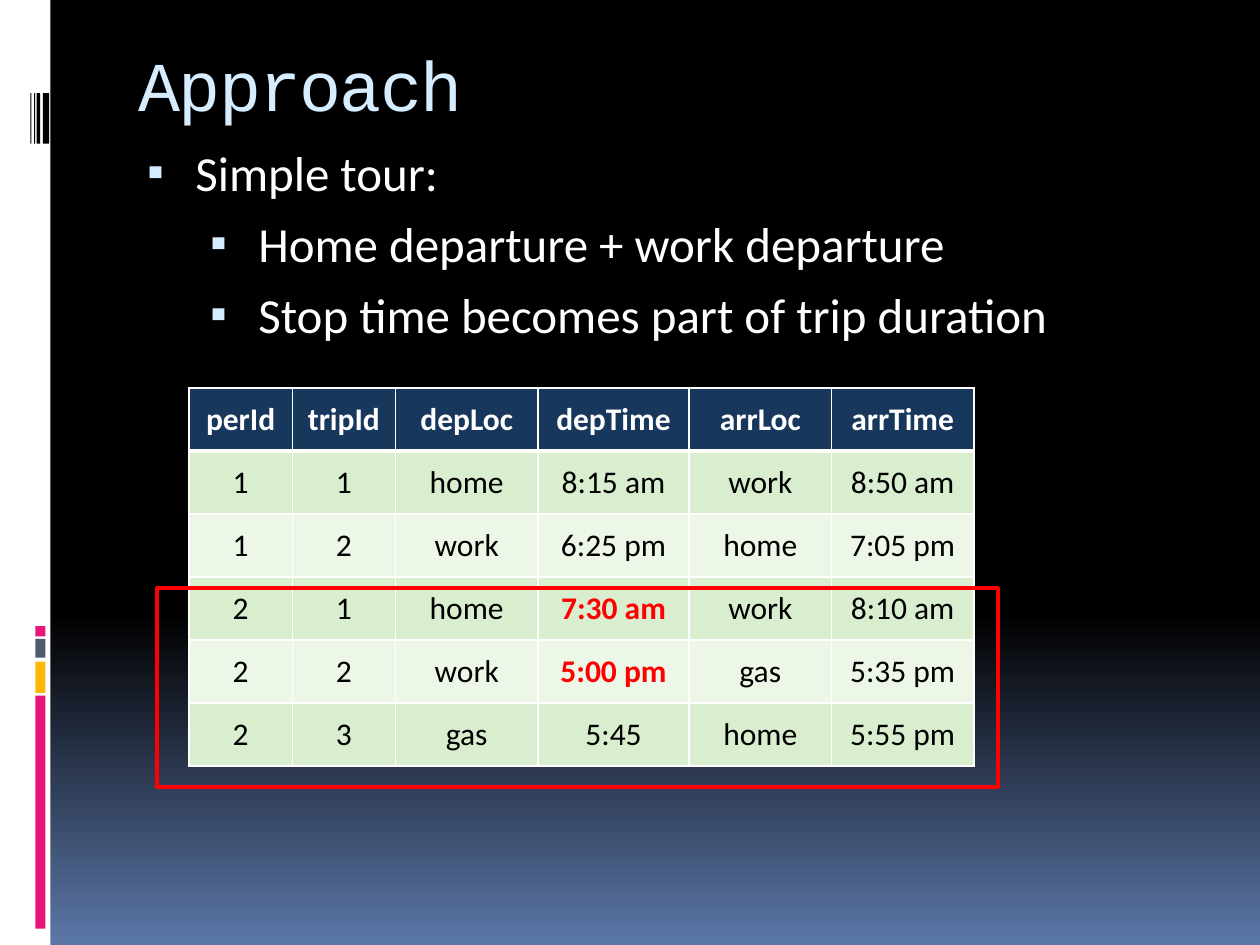
from lxml.etree import SubElement
from pptx import Presentation
from pptx.dml.color import RGBColor
from pptx.enum.shapes import MSO_SHAPE as Shape
from pptx.enum.text import MSO_ANCHOR as Anchor, MSO_AUTO_SIZE as AutoSize, PP_ALIGN as Align
from pptx.oxml import parse_xml
from pptx.oxml.ns import nsdecls, qn
from pptx.util import Inches, Pt

BLACK = RGBColor(0x00, 0x00, 0x00)
WHITE = RGBColor(0xFF, 0xFF, 0xFF)
DUSK = RGBColor(0x5B, 0x77, 0xA8)
PINK = RGBColor(0xEA, 0x15, 0x7A)
AMBER = RGBColor(0xFE, 0xB8, 0x0A)
SLATE = RGBColor(0x4E, 0x5B, 0x6F)
ICE = RGBColor(0xD6, 0xEC, 0xFF)
NAVY = RGBColor(0x17, 0x37, 0x5D)
GREEN = RGBColor(0xD8, 0xEE, 0xCE)
PALE_GREEN = RGBColor(0xEC, 0xF7, 0xE8)
RED = RGBColor(0xFF, 0x00, 0x00)

SIDEBAR = [
    (0, 0, 0.4, 7.5, WHITE),
    (0.28, 5.52, 0.08, 1.85, PINK),
    (0.28, 5.25, 0.08, 0.25, AMBER),
    (0.28, 5.07, 0.08, 0.15, SLATE),
    (0.28, 4.97, 0.08, 0.08, PINK),
] + [(left, 0.74, width, 0.4, BLACK)
     for left, width in [(0.34, 0.05), (0.29, 0.03), (0.27, 0.01), (0.24, 0.01)]]

POINTS = [
    (0, "Simple tour:"),
    (1, "Home departure + work departure"),
    (1, "Stop time becomes part of trip duration"),
]

TRIPS = [
    ["perId", "tripId", "depLoc", "depTime", "arrLoc", "arrTime"],
    ["1", "1", "home", "8:15 am", "work", "8:50 am"],
    ["1", "2", "work", "6:25 pm", "home", "7:05 pm"],
    ["2", "1", "home", "7:30 am", "work", "8:10 am"],
    ["2", "2", "work", "5:00 pm", "gas", "5:35 pm"],
    ["2", "3", "gas", "5:45", "home", "5:55 pm"],
]
COLUMN_WIDTHS = [0.82, 0.82, 1.13, 1.2, 1.13, 1.13]
ROW_HEIGHT = 0.5
TOUR_DEPARTURES = {"7:30 am", "5:00 pm"}


def write(paragraph, text, size, color, font="Calibri", bold=False, align=Align.LEFT, spacing=None):
    paragraph.alignment = align
    run = paragraph.add_run()
    run.text = text
    run.font.name = font
    run.font.size = Pt(size)
    run.font.bold = bold
    run.font.color.rgb = color
    if spacing is not None:
        run._r.get_or_add_rPr().set("spc", str(spacing * 100))


def paint_background(slide):
    fill = slide.background.fill
    fill.gradient()
    fill.gradient_angle = 270
    for stop, position, color in zip(fill.gradient_stops, (0.65, 1), (BLACK, DUSK)):
        stop.position = position
        stop.color.rgb = color


def add_box(slide, left, top, width, height, fill=None, line=None):
    box = slide.shapes.add_shape(
        Shape.RECTANGLE, Inches(left), Inches(top), Inches(width), Inches(height))
    box.shadow.inherit = False
    if fill is None:
        box.fill.background()
    else:
        box.fill.solid()
        box.fill.fore_color.rgb = fill
    if line is None:
        box.line.fill.background()
    else:
        box.line.color.rgb = line
        box.line.width = Pt(2.25)


def place(placeholder, left, top, width, height):
    placeholder.left, placeholder.top = Inches(left), Inches(top)
    placeholder.width, placeholder.height = Inches(width), Inches(height)
    frame = placeholder.text_frame
    frame.word_wrap = True
    frame.auto_size = AutoSize.NONE
    frame.vertical_anchor = Anchor.TOP
    return frame


def fill_title(slide):
    frame = place(slide.shapes.title, 1, 0.17, 8.5, 0.77)
    frame.margin_top = Inches(0.16)
    frame.margin_bottom = 0
    write(frame.paragraphs[0], "Approach", 40, ICE, font="Courier New", spacing=-1)


def add_bullet(paragraph, indent):
    properties = paragraph._p.get_or_add_pPr()
    properties.set("marL", str(Inches(indent)))
    properties.set("indent", str(Inches(-0.38)))
    bullet_color = SubElement(properties, qn("a:buClr"))
    SubElement(bullet_color, qn("a:srgbClr"), val=str(ICE))
    SubElement(properties, qn("a:buSzPct"), val="95000")
    SubElement(properties, qn("a:buFont"), typeface="Calibri")
    SubElement(properties, qn("a:buChar"), char="▪")


def fill_points(slide):
    frame = place(slide.placeholders[1], 1, 1.08, 8.5, 1.83)
    for index, (level, text) in enumerate(POINTS):
        paragraph = frame.add_paragraph() if index else frame.paragraphs[0]
        paragraph.level = level
        paragraph.space_before = Pt(7)
        write(paragraph, text, 28, WHITE)
        add_bullet(paragraph, 0.45 + 0.5 * level)


def add_borders(cell, **widths):
    properties = cell._tc.get_or_add_tcPr()
    for index, side in enumerate("LRTB"):
        properties.insert(index, parse_xml(
            f'<a:ln{side} {nsdecls("a")} w="{Pt(widths.get(side, 1))}">'
            f'<a:solidFill><a:srgbClr val="{WHITE}"/></a:solidFill></a:ln{side}>'))


def add_trip_table(slide):
    table = slide.shapes.add_table(
        len(TRIPS), len(COLUMN_WIDTHS), Inches(1.5), Inches(3.08),
        Inches(sum(COLUMN_WIDTHS)), Inches(ROW_HEIGHT * len(TRIPS))).table
    for column, width in zip(table.columns, COLUMN_WIDTHS):
        column.width = Inches(width)
    for row_index, trip in enumerate(TRIPS):
        table.rows[row_index].height = Inches(ROW_HEIGHT)
        header = row_index == 0
        row_fill = NAVY if header else GREEN if row_index % 2 else PALE_GREEN
        for column_index, text in enumerate(trip):
            cell = table.cell(row_index, column_index)
            cell.vertical_anchor = Anchor.MIDDLE
            cell.fill.solid()
            cell.fill.fore_color.rgb = row_fill
            marked = text in TOUR_DEPARTURES
            color = WHITE if header else RED if marked else BLACK
            write(cell.text_frame.paragraphs[0], text, 18, color,
                  bold=header or marked, align=Align.CENTER)
            add_borders(cell, T=3 if row_index == 1 else 1, B=3 if header else 1)


def main():
    deck = Presentation()
    deck.slide_width, deck.slide_height = Inches(10), Inches(7.5)
    slide = deck.slides.add_slide(deck.slide_layouts[1])
    paint_background(slide)
    for left, top, width, height, color in SIDEBAR:
        add_box(slide, left, top, width, height, fill=color)
    fill_title(slide)
    fill_points(slide)
    add_trip_table(slide)
    add_box(slide, 1.25, 4.67, 6.67, 1.58, line=RED)
    deck.save("out.pptx")


if __name__ == "__main__":
    main()
